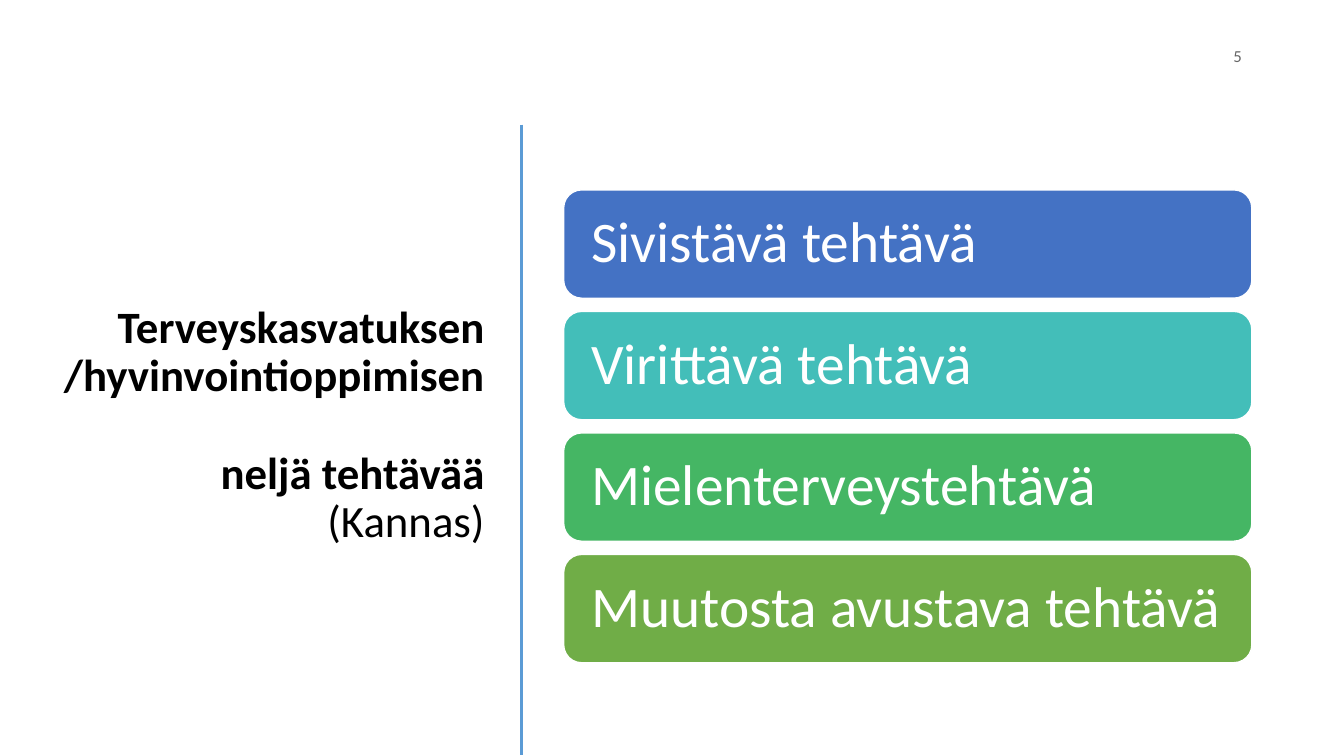
from dataclasses import dataclass

from lxml.etree import SubElement
from pptx import Presentation
from pptx.dml.color import RGBColor
from pptx.enum.shapes import MSO_CONNECTOR, MSO_SHAPE
from pptx.enum.text import MSO_ANCHOR, MSO_AUTO_SIZE, PP_ALIGN
from pptx.oxml.ns import qn
from pptx.slide import Slide
from pptx.util import Pt

FONT = "Calibri"
BLACK = RGBColor(0x00, 0x00, 0x00)
WHITE = RGBColor(0xFF, 0xFF, 0xFF)
GREY = RGBColor(0x66, 0x66, 0x66)
DIVIDER_BLUE = RGBColor(0x5B, 0x9B, 0xD5)
BLUE = RGBColor(0x44, 0x72, 0xC4)
TEAL = RGBColor(0x43, 0xBE, 0xB9)
GREEN = RGBColor(0x45, 0xB6, 0x64)
OLIVE = RGBColor(0x70, 0xAD, 0x47)

CARD_LEFT, CARD_TOP = 402.6, 135.6
CARD_WIDTH, CARD_HEIGHT = 491.6, 77.4
CARD_PITCH = 86.8


@dataclass
class Task:
    text: str
    color: RGBColor


TASKS = [
    Task("Sivistävä tehtävä", BLUE),
    Task("Virittävä tehtävä", TEAL),
    Task("Mielenterveystehtävä", GREEN),
    Task("Muutosta avustava tehtävä", OLIVE),
]


def format_paragraph(p, size: float, color: RGBColor, align: PP_ALIGN) -> None:
    p.alignment = align
    p.font.name = FONT
    p.font.size = Pt(size)
    p.font.color.rgb = color


def add_title(s: Slide) -> None:
    title = s.shapes.title
    title.left, title.top = Pt(37.4), Pt(84.2)
    title.width, title.height = Pt(316.1), Pt(440)
    tf = title.text_frame
    tf.word_wrap = True
    tf.auto_size = MSO_AUTO_SIZE.NONE
    tf.vertical_anchor = MSO_ANCHOR.MIDDLE
    tf.margin_left = Pt(0)
    tf.margin_right = Pt(7.2)
    subject = tf.paragraphs[0]
    subject.text = "Terveyskasvatuksen\v/hyvinvointioppimisen"
    subject.font.bold = True
    count = tf.add_paragraph()
    count.space_before = Pt(35)
    r = count.add_run()
    r.text = "neljä tehtävää"
    r.font.bold = True
    count.add_line_break()
    r = count.add_run()
    r.text = "(Kannas)"
    r.font.bold = False
    for p in (subject, count):
        format_paragraph(p, 32, BLACK, PP_ALIGN.RIGHT)
        p.line_spacing = 0.9


def add_page_number(s: Slide, number: str) -> None:
    sp = s.shapes.add_textbox(Pt(678.2), Pt(25.2), Pt(216), Pt(28.8))
    tf = sp.text_frame
    tf.word_wrap = True
    tf.vertical_anchor = MSO_ANCHOR.MIDDLE
    p = tf.paragraphs[0]
    p.text = number
    p.space_after = Pt(6)
    format_paragraph(p, 12, GREY, PP_ALIGN.RIGHT)


def add_divider(s: Slide) -> None:
    line = s.shapes.add_connector(
        MSO_CONNECTOR.STRAIGHT, Pt(372.4), Pt(89), Pt(372.4), Pt(539.5)
    )
    line.line.color.rgb = DIVIDER_BLUE
    line.line.width = Pt(2)
    SubElement(line.element.spPr, qn("a:effectLst"))


def add_card(s: Slide, task: Task, top: float) -> None:
    sp = s.shapes.add_shape(
        MSO_SHAPE.ROUNDED_RECTANGLE,
        Pt(CARD_LEFT), Pt(top), Pt(CARD_WIDTH), Pt(CARD_HEIGHT),
    )
    sp.shadow.inherit = False
    sp.fill.solid()
    sp.fill.fore_color.rgb = task.color
    sp.line.color.rgb = WHITE
    sp.line.width = Pt(1)
    tf = sp.text_frame
    tf.word_wrap = True
    tf.vertical_anchor = MSO_ANCHOR.MIDDLE
    tf.margin_left = tf.margin_right = Pt(16)
    p = tf.paragraphs[0]
    p.text = task.text
    p.line_spacing = 0.9
    format_paragraph(p, 41, WHITE, PP_ALIGN.LEFT)


def main() -> None:
    prs = Presentation()
    prs.slide_width, prs.slide_height = Pt(960), Pt(540)
    s = prs.slides.add_slide(prs.slide_layouts.get_by_name("Title Only"))
    add_title(s)
    add_page_number(s, "5")
    add_divider(s)
    for i, task in enumerate(TASKS):
        add_card(s, task, CARD_TOP + i * CARD_PITCH)
    prs.save("out.pptx")


if __name__ == "__main__":
    main()
